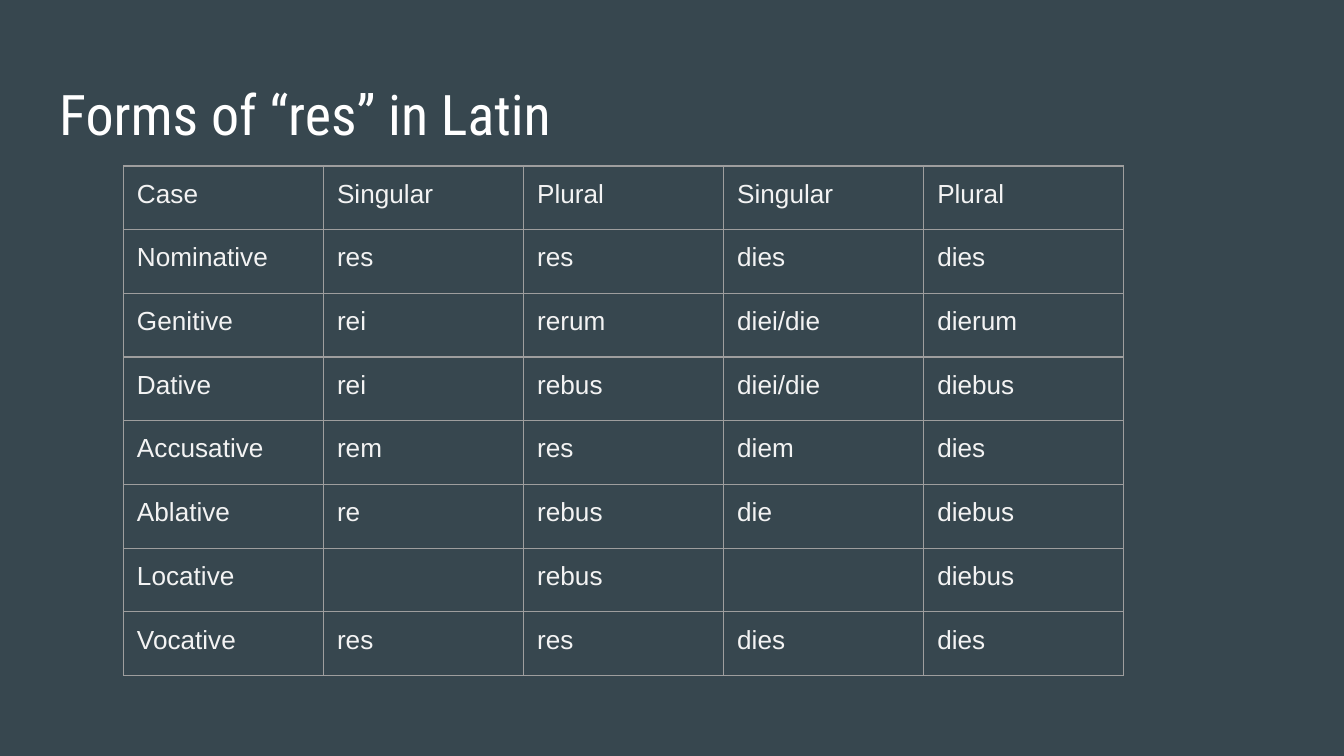
from dataclasses import dataclass

from lxml.etree import SubElement as Sub
from pptx import Presentation as Deck
from pptx.dml.color import RGBColor as Rgb
from pptx.enum.text import MSO_ANCHOR as Anchor, PP_ALIGN as Align
from pptx.oxml.ns import qn
from pptx.util import Pt

HUES = {"back": "37474F", "title": "FFFFFF", "text": "F3F3F3", "rule": "9E9E9E"}
INSET = Pt(7.2)


@dataclass
class Style:
    font: str
    size: float
    hue: str


@dataclass
class Form:
    case: str
    res: str
    res_all: str
    dies: str
    dies_all: str

    def words(self) -> list[str]:
        return [self.case, self.res, self.res_all, self.dies, self.dies_all]


HEAD = Style("Roboto Condensed", 30, "title")
BODY = Style("Arial", 14, "text")
FORMS = [
    Form("Case", "Singular", "Plural", "Singular", "Plural"),
    Form("Nominative", "res", "res", "dies", "dies"),
    Form("Genitive", "rei", "rerum", "diei/die", "dierum"),
    Form("Dative", "rei", "rebus", "diei/die", "diebus"),
    Form("Accusative", "rem", "res", "diem", "dies"),
    Form("Ablative", "re", "rebus", "die", "diebus"),
    Form("Locative", "", "rebus", "", "diebus"),
    Form("Vocative", "res", "res", "dies", "dies"),
]


def write(frame, text: str, style: Style) -> None:
    frame.text = text
    para = frame.paragraphs[0]
    para.alignment = Align.LEFT
    for run in para.runs:
        run.font.name = style.font
        run.font.size = Pt(style.size)
        run.font.color.rgb = Rgb.from_string(HUES[style.hue])


def pad(box) -> None:
    box.margin_left = box.margin_right = INSET
    box.margin_top = box.margin_bottom = INSET


def rule(cell) -> None:
    props = cell._tc.get_or_add_tcPr()
    for side in ("a:lnL", "a:lnR", "a:lnT", "a:lnB"):
        line = Sub(props, qn(side), w=str(Pt(0.75)))
        fill = Sub(line, qn("a:solidFill"))
        Sub(fill, qn("a:srgbClr"), val=HUES["rule"])


def draw_title(slide, text: str) -> None:
    title = slide.shapes.title
    title.left, title.top = Pt(24.5), Pt(35.4)
    title.width, title.height = Pt(671), Pt(45.2)
    frame = title.text_frame
    pad(frame)
    frame.word_wrap = True
    frame.vertical_anchor = Anchor.TOP
    write(frame, text, HEAD)


def draw_forms(slide, forms: list[Form]) -> None:
    cols = len(forms[0].words())
    wide, high = Pt(107.2), Pt(34.15)
    table = slide.shapes.add_table(
        len(forms), cols, Pt(66.2), Pt(88.9), wide * cols, high * len(forms)
    ).table
    table.first_row = table.horz_banding = False
    for col in table.columns:
        col.width = wide
    for row, form in zip(table.rows, forms):
        row.height = high
        for cell, word in zip(row.cells, form.words()):
            rule(cell)
            cell.fill.background()
            if word:
                pad(cell)
                write(cell.text_frame, word, BODY)


def main() -> None:
    deck = Deck()
    deck.slide_width, deck.slide_height = Pt(720), Pt(405)
    slide = deck.slides.add_slide(deck.slide_layouts[5])
    fill = slide.background.fill
    fill.solid()
    fill.fore_color.rgb = Rgb.from_string(HUES["back"])
    draw_title(slide, "Forms of “res” in Latin")
    draw_forms(slide, FORMS)
    deck.save("out.pptx")


if __name__ == "__main__":
    main()
